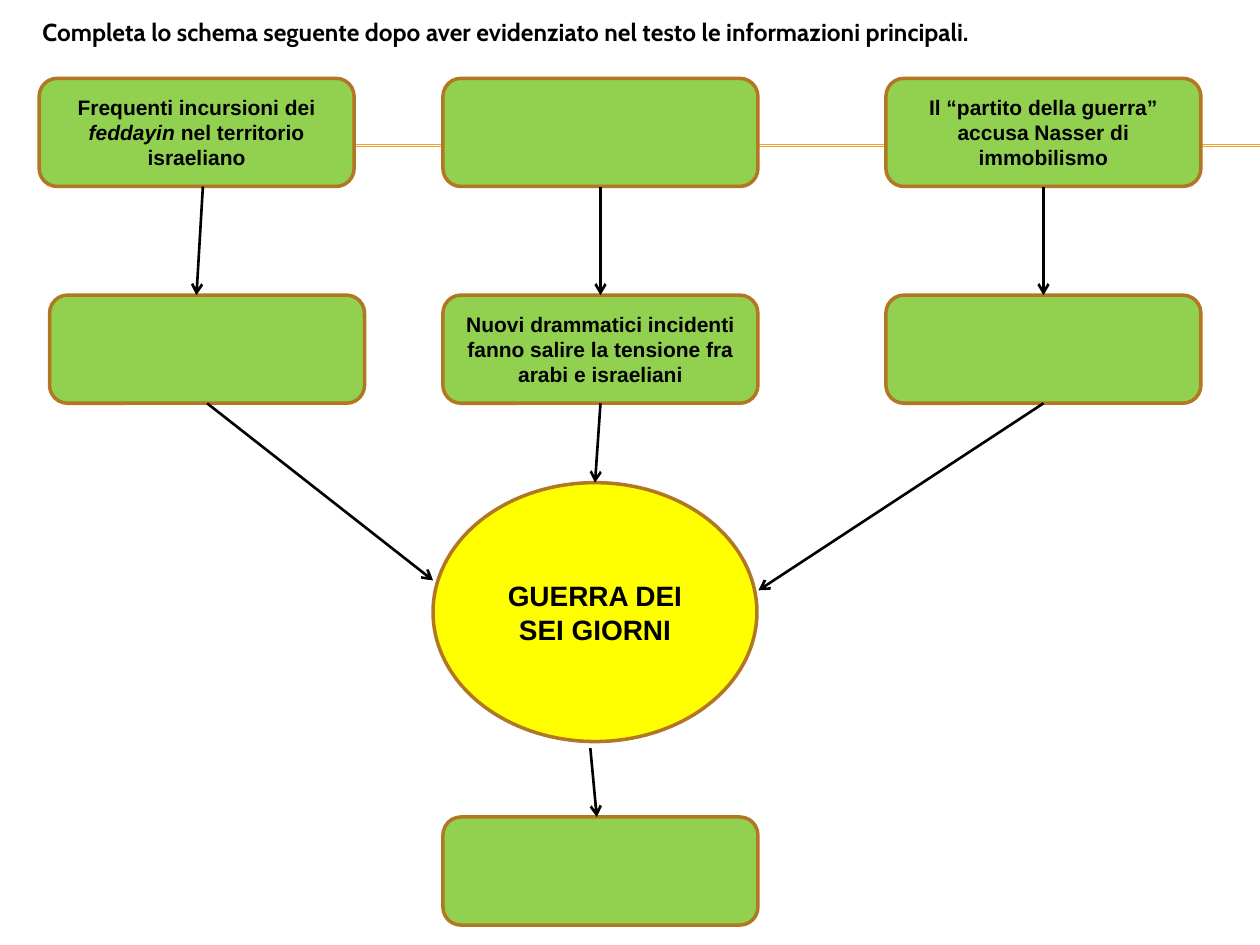
from lxml import etree
from pptx import Presentation
from pptx import util as u
from pptx.dml.color import RGBColor
from pptx.enum import shapes, text
from pptx.oxml.ns import qn

HUES = {"green": "92D050", "yellow": "FFFF00", "brown": "B17722",
        "gold": "F0A22E", "ink": "000000"}
TOP, LEFT, BOTTOM = 0, 1, 2
BOX_W, BOX_H = 6.35, 2.18


class Board:
    def __init__(self, slide, face="Arial"):
        self.slide = slide
        self.face = face

    def hue(self, name):
        return RGBColor.from_string(HUES[name])

    def style(self, par, size, face=None):
        for run in par.runs:
            font = run.font
            font.name, font.size, font.bold = face or self.face, u.Pt(size), True
            font.color.rgb = self.hue("ink")

    def title(self, words, x, y, w, h):
        box = self.slide.shapes.title
        box.left, box.top, box.width, box.height = map(u.Cm, (x, y, w, h))
        frame = box.text_frame
        frame.text = words
        frame.word_wrap = True
        frame.auto_size = text.MSO_AUTO_SIZE.NONE
        frame.vertical_anchor = text.MSO_ANCHOR.MIDDLE
        par = frame.paragraphs[0]
        par.alignment = text.PP_ALIGN.JUSTIFY
        self.style(par, 14, "Cabin")

    def node(self, x, y, parts=(), w=BOX_W, h=BOX_H, fill="green",
             kind=shapes.MSO_SHAPE.ROUNDED_RECTANGLE, size=12):
        """Each part is a pair: words, italic."""
        box = self.slide.shapes.add_shape(kind, *map(u.Cm, (x, y, w, h)))
        box.shadow.inherit = False
        box.fill.solid()
        box.fill.fore_color.rgb = self.hue(fill)
        box.line.color.rgb = self.hue("brown")
        box.line.width = u.Pt(2)
        frame = box.text_frame
        frame.word_wrap = True
        frame.vertical_anchor = text.MSO_ANCHOR.MIDDLE
        par = frame.paragraphs[0]
        par.alignment = text.PP_ALIGN.CENTER
        for words, slant in parts:
            run = par.add_run()
            run.text = words
            run.font.italic = slant
        self.style(par, size)
        return box

    def line(self, x1, y1, x2, y2, hue="gold", width=0.75):
        link = self.slide.shapes.add_connector(
            shapes.MSO_CONNECTOR.STRAIGHT, *map(u.Cm, (x1, y1, x2, y2)))
        link.line.color.rgb = self.hue(hue)
        link.line.width = u.Pt(width)
        etree.SubElement(link._element.spPr, qn("a:effectLst"))
        return link

    def arrow(self, start, end):
        """An end is a point (x, y) or a joined side (shape, site)."""
        free = [(0, 0) if hasattr(e[0], "shape_id") else e for e in (start, end)]
        link = self.line(*free[0], *free[1], hue="ink", width=1.5)
        if hasattr(start[0], "shape_id"):
            link.begin_connect(*start)
        if hasattr(end[0], "shape_id"):
            link.end_connect(*end)
        etree.SubElement(link.line._get_or_add_ln(), qn("a:tailEnd"), type="arrow")


def main():
    deck = Presentation()
    deck.slide_width, deck.slide_height = u.Cm(25.4), u.Cm(19.05)
    board = Board(deck.slides.add_slide(deck.slide_layouts[5]))

    # Heading and rules behind the boxes
    board.title("Completa lo schema seguente dopo aver evidenziato nel testo "
                "le informazioni principali.", 0.6, 0.26, 20.42, 0.76)
    for y in (2.92, 2.95):
        board.line(1.42, y, 25.4, y)

    # Boxes: causes, effects, outcome
    mid, right = 8.93, 17.86
    row1, row2, row3 = 1.58, 5.95, 16.47
    board.node(0.79, row1, [("Frequenti incursioni dei ", False),
                            ("feddayin", True),
                            (" nel territorio israeliano", False)])
    cause = board.node(mid, row1)
    party = board.node(right, row1, [
        ("Il “partito della guerra” accusa Nasser di immobilismo", False)])
    reply = board.node(1, row2)
    clash = board.node(mid, row2, [
        ("Nuovi drammatici incidenti fanno salire la tensione "
         "fra arabi e israeliani", False)])
    move = board.node(right, row2)
    war = board.node(8.73, 9.73, [("GUERRA DEI SEI GIORNI", False)], 6.53, 5.22,
                     "yellow", shapes.MSO_SHAPE.OVAL, 16)
    board.node(mid, row3)

    # Arrows
    for start, end in [
        ((4.09, row1 + BOX_H), (3.96, row2)),
        ((cause, BOTTOM), (clash, TOP)),
        ((party, BOTTOM), (move, TOP)),
        ((reply, BOTTOM), (8.73, 11.7)),
        ((clash, BOTTOM), (war, TOP)),
        ((move, BOTTOM), (15.29, 11.9)),
        ((11.9, 15.08), (12.03, row3)),
    ]:
        board.arrow(start, end)

    deck.save("out.pptx")


if __name__ == "__main__":
    main()
